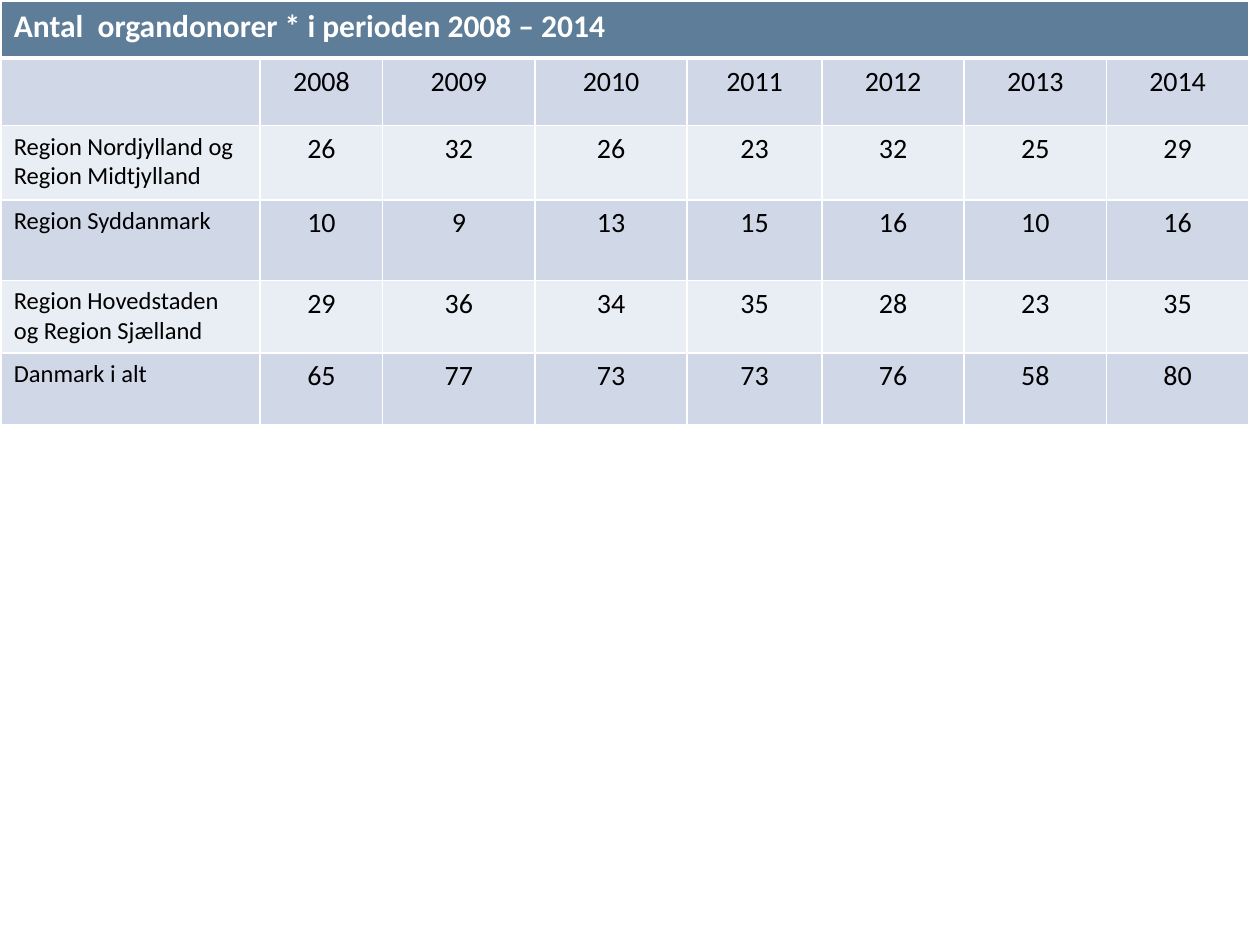
from lxml.etree import SubElement
from pptx import Presentation
from pptx.dml.color import RGBColor
from pptx.enum.text import PP_ALIGN as Align
from pptx.oxml.ns import qn
from pptx.util import Pt

WHITE = RGBColor(0xFF, 0xFF, 0xFF)
BLACK = RGBColor(0x00, 0x00, 0x00)
HEADER_BLUE = RGBColor(0x5D, 0x7D, 0x98)
BAND_DARK = RGBColor(0xD0, 0xD8, 0xE8)
BAND_LIGHT = RGBColor(0xE9, 0xED, 0xF4)

FONT = "Calibri"
TITLE = "Antal  organdonorer * i perioden 2008 – 2014"
DONOR_ROWS = [
    ("", *range(2008, 2015)),
    ("Region Nordjylland og Region Midtjylland", 26, 32, 26, 23, 32, 25, 29),
    ("Region Syddanmark", 10, 9, 13, 15, 16, 10, 16),
    ("Region Hovedstaden og Region Sjælland", 29, 36, 34, 35, 28, 23, 35),
    ("Danmark i alt", 65, 77, 73, 73, 76, 58, 80),
]
COLUMN_WIDTHS = [148, 70, 87, 87, 77, 81.3, 81.3, 81.3]
ROW_HEIGHTS = [32.5, 38.5, 42.5, 46, 41.5, 41]
TABLE_OFFSET = 0.7
THIN, THICK = 1, 3


def set_borders(cell, top=THIN, bottom=THIN):
    """Draw white lines on all four sides; call before setting the fill."""
    properties = cell._tc.get_or_add_tcPr()
    widths = {"a:lnL": THIN, "a:lnR": THIN, "a:lnT": top, "a:lnB": bottom}
    for side, width in widths.items():
        line = SubElement(properties, qn(side), w=str(Pt(width)))
        fill = SubElement(line, qn("a:solidFill"))
        SubElement(fill, qn("a:srgbClr"), val=str(WHITE))


def set_fill(cell, color):
    cell.fill.solid()
    cell.fill.fore_color.rgb = color


def write_cell(cell, text, size, color=BLACK, bold=False, align=Align.LEFT):
    cell.text = str(text)
    paragraph = cell.text_frame.paragraphs[0]
    paragraph.alignment = align
    font = paragraph.font
    font.name, font.size, font.bold = FONT, Pt(size), bold
    font.color.rgb = color


def add_donor_table(slide):
    table = slide.shapes.add_table(
        len(ROW_HEIGHTS), len(COLUMN_WIDTHS), Pt(TABLE_OFFSET), Pt(TABLE_OFFSET),
        Pt(sum(COLUMN_WIDTHS)), Pt(sum(ROW_HEIGHTS))).table
    for column, width in zip(table.columns, COLUMN_WIDTHS):
        column.width = Pt(width)
    for row, height in zip(table.rows, ROW_HEIGHTS):
        row.height = Pt(height)

    # Title row across all columns
    for cell in table.rows[0].cells:
        set_borders(cell, bottom=THICK)
        set_fill(cell, HEADER_BLUE)
    title_cell = table.cell(0, 0)
    title_cell.merge(table.cell(0, len(COLUMN_WIDTHS) - 1))
    write_cell(title_cell, TITLE, 18, WHITE, bold=True)

    # Years, regions and total in alternating bands
    for row_index, values in enumerate(DONOR_ROWS, start=1):
        band = BAND_DARK if row_index % 2 else BAND_LIGHT
        for column_index, value in enumerate(values):
            cell = table.cell(row_index, column_index)
            set_borders(cell, top=THICK if row_index == 1 else THIN)
            set_fill(cell, band)
            if column_index == 0:
                write_cell(cell, value, 14)
            else:
                write_cell(cell, value, 16, align=Align.CENTER)


def main():
    presentation = Presentation()
    presentation.slide_width, presentation.slide_height = Pt(720), Pt(540)
    slide = presentation.slides.add_slide(presentation.slide_layouts[6])
    add_donor_table(slide)
    presentation.save("out.pptx")


if __name__ == "__main__":
    main()
